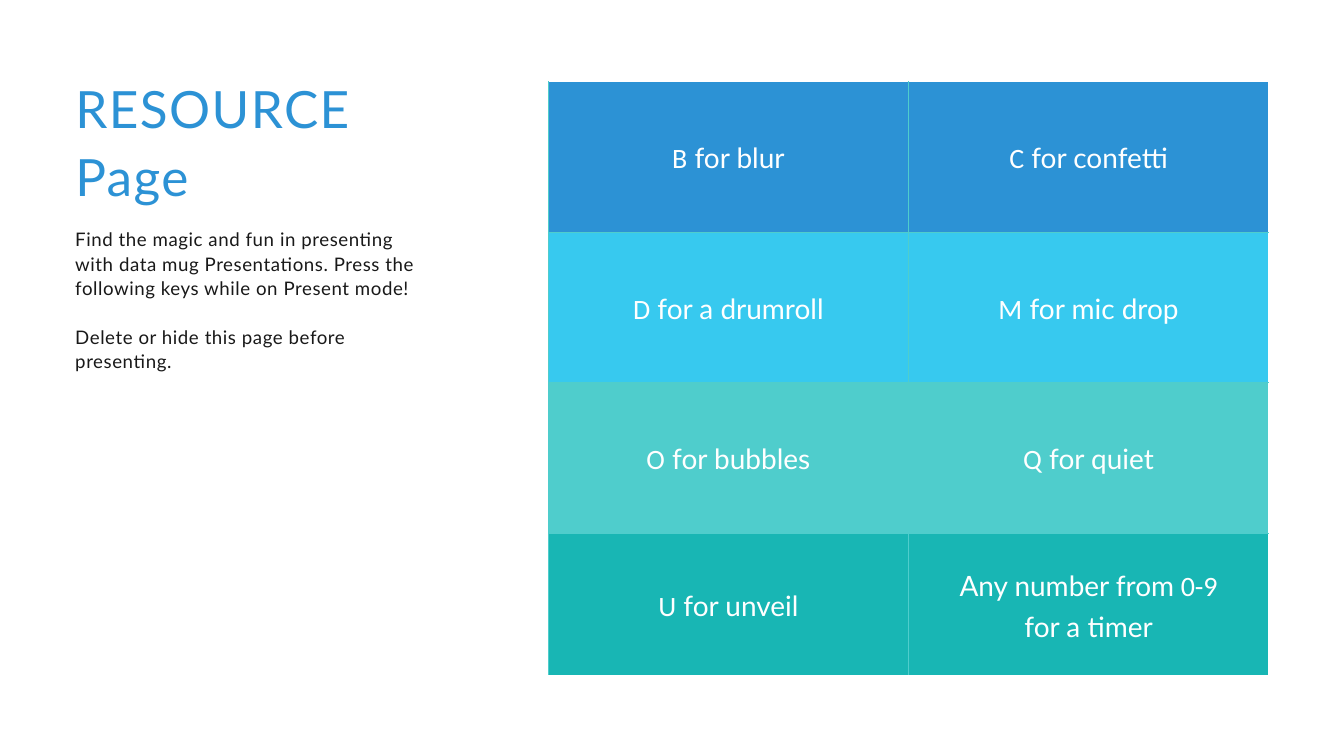
import pptx
import pptx.dml.color
import pptx.enum.text
import pptx.oxml
import pptx.oxml.ns
import pptx.util

RGB = pptx.dml.color.RGBColor
ALIGN = pptx.enum.text.PP_ALIGN
ANCHOR = pptx.enum.text.MSO_ANCHOR
Pt = pptx.util.Pt

WHITE = RGB(0xFF, 0xFF, 0xFF)
INK = RGB(0x19, 0x19, 0x19)
BLUE = RGB(0x2C, 0x92, 0xD5)
SKY = RGB(0x37, 0xC9, 0xEF)
AQUA = RGB(0x4F, 0xCD, 0xCC)
TEAL = RGB(0x18, 0xB6, 0xB4)

COLS, ROWS = 20, 11.25

# Each row: fill colour and the text of its cells
KEYS = [
    (BLUE, ["B for blur", "C for confetti"]),
    (SKY, ["D for a drumroll", "M for mic drop"]),
    (AQUA, ["O for bubbles", "Q for quiet"]),
    (TEAL, ["U for unveil", "Any number from 0-9\nfor a timer"]),
]


class Page:
    body = "Lato"
    key = "Calibri"
    pad = 0.21

    def __init__(self, deck):
        self.unit = deck.slide_width / COLS
        self.slide = deck.slides.add_slide(deck.slide_layouts[5])

    def span(self, *cells):
        return [round(cell * self.unit) for cell in cells]

    def style(self, para, size, color, lead, align=ALIGN.LEFT):
        para.alignment = align
        para.line_spacing = Pt(lead)
        para.font.size = Pt(size)
        para.font.color.rgb = color

    def put(self, shape, lines, size, color, lead, track, gap=0):
        frame = shape.text_frame
        frame.word_wrap = True
        frame.auto_size = pptx.enum.text.MSO_AUTO_SIZE.NONE
        frame.vertical_anchor = ANCHOR.TOP
        frame.margin_left = frame.margin_right = 0
        frame.margin_top = frame.margin_bottom = 0
        frame.text = "\n".join(lines)
        for i, para in enumerate(frame.paragraphs):
            self.style(para, size, color, lead)
            para.font.name = self.body
            para.space_before = Pt(gap if i else 0)
            for run in para.runs:
                run._r.get_or_add_rPr().set("spc", str(round(track * 100)))

    def title(self, box, lines, **look):
        shape = self.slide.shapes.title
        shape.left, shape.top, shape.width, shape.height = self.span(*box)
        self.put(shape, lines, **look)

    def text(self, box, lines, **look):
        self.put(self.slide.shapes.add_textbox(*self.span(*box)), lines, **look)

    def edge(self, cell, side, color):
        props = cell._tc.get_or_add_tcPr()
        props.append(pptx.oxml.parse_xml(
            f'<a:ln{side} {pptx.oxml.ns.nsdecls("a")} w="{Pt(0.75)}"><a:solidFill>'
            f'<a:srgbClr val="{color}"/></a:solidFill></a:ln{side}>'))

    def split(self, words):
        """Part the key to press, which has its own font, from the rest."""
        if words.endswith(" 0-9"):
            return [(words[:-4], self.body), (words[-4:], self.key)]
        if words[1:].startswith(" for"):
            return [(words[0], self.key), (words[1:], self.body)]
        return [(words, self.body)]

    def fill(self, cell, text, color):
        cell.fill.solid()
        cell.fill.fore_color.rgb = color
        cell.vertical_anchor = ANCHOR.MIDDLE
        pad, = self.span(self.pad)
        cell.margin_left = cell.margin_right = pad
        cell.margin_top = cell.margin_bottom = pad
        frame = cell.text_frame
        for i, words in enumerate(text.split("\n")):
            para = frame.add_paragraph() if i else frame.paragraphs[0]
            self.style(para, 30, WHITE, 42, ALIGN.CENTER)
            for part, font in self.split(words):
                run = para.add_run()
                run.text = part
                run.font.name = font

    def table(self, box, rows, heights):
        wide = len(rows[0][1])
        grid = self.slide.shapes.add_table(len(rows), wide, *self.span(*box)).table
        grid.first_row = grid.horz_banding = False
        for r, (color, texts) in enumerate(rows):
            grid.rows[r].height, = self.span(heights[r])
            for c, text in enumerate(texts):
                cell = grid.cell(r, c)
                # Borders come before the fill; top, right and bottom rims are white
                self.edge(cell, "L", AQUA)
                self.edge(cell, "R", WHITE if c == wide - 1 else AQUA)
                self.edge(cell, "T", AQUA if r else WHITE)
                self.edge(cell, "B", WHITE if r == len(rows) - 1 else AQUA)
                self.fill(cell, text, color)


def main():
    deck = pptx.Presentation()
    deck.slide_width = pptx.util.Inches(COLS)
    deck.slide_height = pptx.util.Inches(ROWS)
    page = Page(deck)

    # Keys
    page.table((8.16, 1.21, 10.72, 8.82), KEYS, [2.24] * 3 + [2.12])

    # Heading and notes on the left
    page.title((1.12, 1.07, 5.53, 1.97), ["RESOURCE", "Page"],
               size=55, color=BLUE, lead=72, track=1.6)
    page.text((1.12, 3.37, 5.1, 2.53), [
        "Find the magic and fun in presenting with data mug Presentations. "
        "Press the following keys while on Present mode!",
        "Delete or hide this page before presenting.",
    ], size=20, color=INK, lead=26, track=0.6, gap=26)

    deck.save("out.pptx")


if __name__ == "__main__":
    main()
